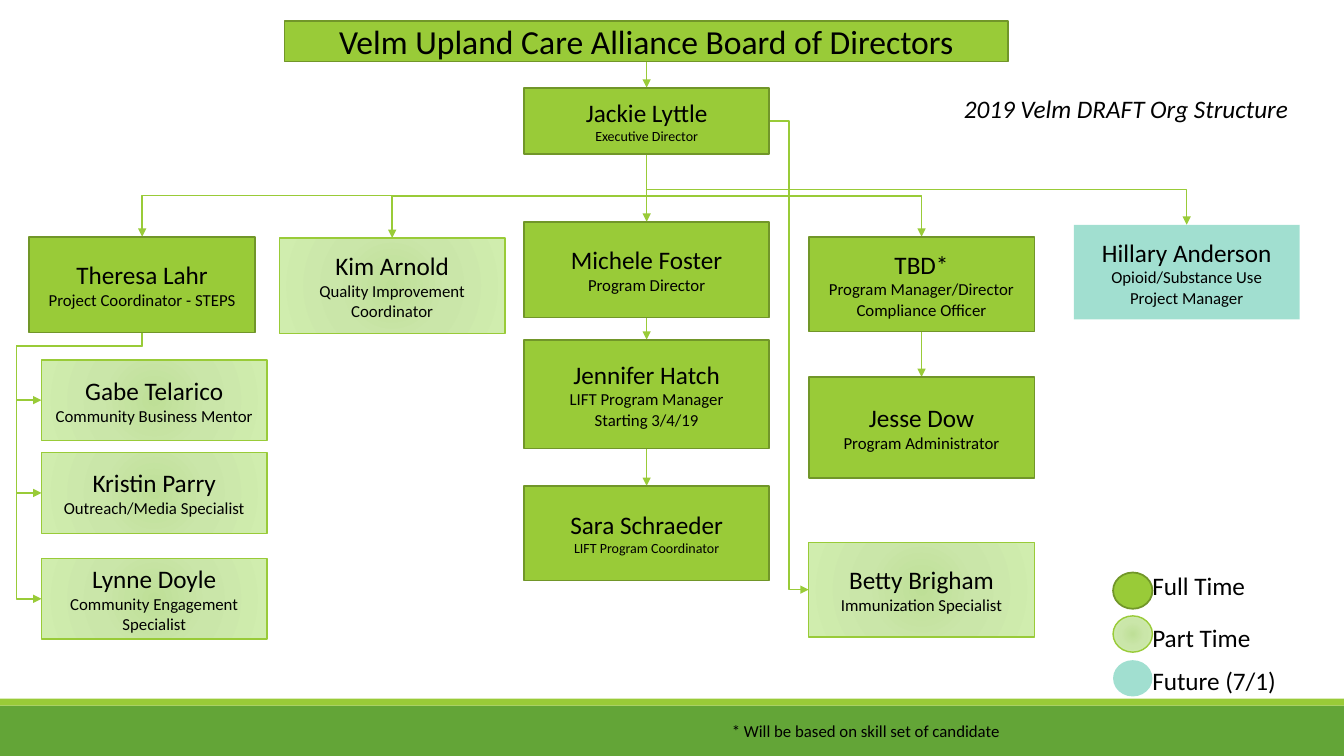
import dataclasses
import pptx
import pptx.dml.color
import pptx.enum.shapes
import pptx.enum.text
import pptx.oxml
import pptx.oxml.ns
import pptx.util

WIDE = pptx.util.Inches(13.33)
HIGH = pptx.util.Inches(7.5)
NS = 'xmlns:a="http://schemas.openxmlformats.org/drawingml/2006/main"'
KIND = pptx.enum.shapes.MSO_SHAPE
ALIGN = pptx.enum.text.PP_ALIGN
TOP, LEFT, BASE, RIGHT = range(4)


@dataclasses.dataclass(frozen=True)
class Theme:
    font: str = "Calibri"
    ink: str = "000000"
    full: str = "99CB38"
    edge: str = "719629"
    band: str = "63A537"
    later: str = "44C1A3"
    glow: tuple = ((0, "BEDF97"), (45, "CAE6A9"), (100, "D0EDAE"))
    head: int = 24
    name: int = 18
    role: int = 12
    small: int = 10
    thick: float = 1.25
    thin: float = 1


THEME = Theme()

COLS = {
    "steps": (2.18, 16.8),
    "staff": (3.08, 16.8),
    "care": (20.78, 16.8),
    "lift": (39, 18.23),
    "admin": (60.17, 16.8),
    "next": (79.9, 16.8),
}

BOXES = [
    ("Jackie Lyttle", ["Executive Director"], "lift", 11.6, 8.8, "full", THEME.small),
    ("Theresa Lahr", ["Project Coordinator - STEPS"], "steps", 31.33, 12.67, "full", THEME.role),
    ("Kim Arnold", ["Quality Improvement Coordinator"], "care", 31.47, 12.67, "part", THEME.role),
    ("Michele Foster", ["Program Director"], "lift", 29.33, 12.67, "full", THEME.role),
    ("TBD*", ["Program Manager/Director Compliance Officer"], "admin", 31.33, 12.53, "full", THEME.role),
    ("Hillary Anderson", ["Opioid/Substance Use", "Project Manager"], "next", 29.73, 12.53, "later", THEME.role),
    ("Gabe Telarico", ["Community Business Mentor"], "staff", 47.6, 10.67, "part", THEME.role),
    ("Kristin Parry", ["Outreach/Media Specialist"], "staff", 59.87, 10.67, "part", THEME.role),
    ("Lynne Doyle", ["Community Engagement Specialist"], "staff", 73.87, 10.67, "part", THEME.role),
    ("Jennifer Hatch", ["LIFT Program Manager", "Starting 3/4/19"], "lift", 44.93, 14.4, "full", THEME.role),
    ("Sara Schraeder", ["LIFT Program Coordinator"], "lift", 64.27, 12.53, "full", THEME.small),
    ("Jesse Dow", ["Program Administrator"], "admin", 49.87, 13.33, "full", THEME.role),
    ("Betty Brigham", ["Immunization Specialist"], "admin", 71.73, 12.53, "part", THEME.role),
]

LINKS = [
    ("Board", BASE, "Jackie Lyttle", TOP, [0.5]),
    ("Jackie Lyttle", BASE, "TBD*", TOP, [0.5]),
    ("Jackie Lyttle", BASE, "Jesse Dow", TOP, [0.19]),
    ("Jackie Lyttle", BASE, "Kim Arnold", TOP, [0.5]),
    ("Jackie Lyttle", BASE, "Theresa Lahr", TOP, [0.5]),
    ("Jackie Lyttle", BASE, "Michele Foster", TOP, [0.5]),
    ("Jackie Lyttle", BASE, "Hillary Anderson", TOP, [0.5]),
    ("Jackie Lyttle", RIGHT, "Betty Brigham", LEFT, [0.5]),
    ("Michele Foster", BASE, "Jennifer Hatch", TOP, [0.5]),
    ("Jennifer Hatch", BASE, "Sara Schraeder", TOP, [0.5]),
    ("Theresa Lahr", BASE, "Gabe Telarico", LEFT, [0.2, 1.25]),
    ("Theresa Lahr", BASE, "Kristin Parry", LEFT, [0.08, 1.25]),
    ("Theresa Lahr", BASE, "Lynne Doyle", LEFT, [0.05, 1.25]),
]

KEYS = [
    ("Full Time", "full", 75.73, 74.8),
    ("Part Time", "part", 81.47, 81.6),
    ("Future (7/1)", "later", 87.33, 87.33),
]


def place(x, y, w, h):
    return [int(whole * part / 100) for whole, part in ((WIDE, x), (HIGH, y), (WIDE, w), (HIGH, h))]


def tint(code):
    return pptx.dml.color.RGBColor.from_string(code)


def paint(shape, code, edge=None, width=THEME.thick):
    shape.fill.solid()
    shape.fill.fore_color.rgb = tint(code)
    if edge:
        shape.line.color.rgb = tint(edge)
        shape.line.width = pptx.util.Pt(width)
    else:
        shape.line.fill.background()


def style(shape, time):
    if time == "full":
        paint(shape, THEME.full, THEME.edge)
    elif time == "later":
        paint(shape, THEME.later)
        shade = shape.element.spPr.find(".//" + pptx.oxml.ns.qn("a:srgbClr"))
        shade.append(pptx.oxml.parse_xml(f'<a:alpha {NS} val="50000"/>'))
    else:
        paint(shape, THEME.full, THEME.full, THEME.thin)
        stops = "".join(
            f'<a:gs pos="{spot * 1000}"><a:srgbClr val="{code}"/></a:gs>' for spot, code in THEME.glow
        )
        glow = pptx.oxml.parse_xml(
            f'<a:gradFill {NS} rotWithShape="1"><a:gsLst>{stops}</a:gsLst><a:path path="circle">'
            '<a:fillToRect l="100000" t="100000" r="100000" b="100000"/></a:path></a:gradFill>'
        )
        props = shape.element.spPr
        props.replace(props.find(pptx.oxml.ns.qn("a:solidFill")), glow)


def write(frame, lines, align, slant=False):
    frame.word_wrap = True
    for num, (text, size) in enumerate(lines):
        para = frame.paragraphs[0] if num == 0 else frame.add_paragraph()
        para.alignment = align
        run = para.add_run()
        run.text = text
        run.font.name = THEME.font
        run.font.size = pptx.util.Pt(size)
        run.font.color.rgb = tint(THEME.ink)
        run.font.italic = slant


def form(slide, kind, *area):
    shape = slide.shapes.add_shape(kind, *place(*area))
    shape.shadow.inherit = False
    return shape


def label(slide, text, size, area, slant=False):
    box = slide.shapes.add_textbox(*place(*area))
    write(box.text_frame, [(text, size)], ALIGN.LEFT, slant)


def person(slide, name, roles, col, top, tall, time, size):
    left, width = COLS[col]
    box = form(slide, KIND.RECTANGLE, left, top, width, tall)
    style(box, time)
    box.text_frame.vertical_anchor = pptx.enum.text.MSO_ANCHOR.MIDDLE
    write(box.text_frame, [(name, THEME.name)] + [(role, size) for role in roles], ALIGN.CENTER)
    return box


def board(slide):
    box = slide.shapes.title
    box.left, box.top, box.width, box.height = place(21.16, 2.8, 53.86, 5.33)
    box.element.spPr.xfrm.addnext(
        pptx.oxml.parse_xml(f'<a:prstGeom {NS} prst="roundRect"><a:avLst/></a:prstGeom>')
    )
    style(box, "full")
    frame = box.text_frame
    frame.auto_size = pptx.enum.text.MSO_AUTO_SIZE.NONE
    frame.vertical_anchor = pptx.enum.text.MSO_ANCHOR.MIDDLE
    write(frame, [("Velm Upland Care Alliance Board of Directors", THEME.head)], ALIGN.CENTER)
    return box


def link(slide, start, out, end, into, bends):
    line = slide.shapes.add_connector(pptx.enum.shapes.MSO_CONNECTOR.ELBOW, 0, 0, 0, 0)
    line.begin_connect(start, out)
    line.end_connect(end, into)
    line.line.color.rgb = tint(THEME.full)
    line.line.width = pptx.util.Pt(THEME.thin)
    props = line.element.spPr
    if out == BASE:
        east = line.end_x > line.begin_x
        mid_x, mid_y = (line.begin_x + line.end_x) // 2, (line.begin_y + line.end_y) // 2
        long, wide = line.height, line.width
        for flip in ("flipH", "flipV"):
            props.xfrm.attrib.pop(flip, None)
        line.left, line.top = mid_x - long // 2, mid_y - wide // 2
        line.width, line.height = long, wide
        props.xfrm.set("rot", str((270 if east else 90) * 60000))
        if east:
            props.xfrm.set("flipH", "1")
    guides = "".join(
        f'<a:gd name="adj{num}" fmla="val {round(bend * 100000)}"/>' for num, bend in enumerate(bends, 1)
    )
    props.replace(props.find(pptx.oxml.ns.qn("a:prstGeom")), pptx.oxml.parse_xml(
        f'<a:prstGeom {NS} prst="bentConnector{len(bends) + 2}"><a:avLst>{guides}</a:avLst></a:prstGeom>'
    ))
    props.find(pptx.oxml.ns.qn("a:ln")).append(pptx.oxml.parse_xml(f'<a:tailEnd {NS} type="triangle"/>'))
    props.append(pptx.oxml.parse_xml(f"<a:effectLst {NS}/>"))
    slide.shapes.element.insert(2, line.element)


def main():
    deck = pptx.Presentation()
    deck.slide_width, deck.slide_height = WIDE, HIGH
    slide = deck.slides.add_slide(deck.slide_layouts.get_by_name("Title Only"))
    paint(form(slide, KIND.RECTANGLE, 0, 93.33, 100, 6.67), THEME.band)
    paint(form(slide, KIND.RECTANGLE, 0, 92.4, 100, 0.93), THEME.full)
    boxes = {"Board": board(slide)}
    for name, *rest in BOXES:
        boxes[name] = person(slide, name, *rest)
    for start, out, end, into, bends in LINKS:
        link(slide, boxes[start], out, boxes[end], into, bends)
    for text, time, dot, top in KEYS:
        style(form(slide, KIND.OVAL, 82.82, dot, 2.93, 4.8), time)
        label(slide, text, THEME.name, (85, top, 13.8, 5.33))
    label(slide, "2019 Velm DRAFT Org Structure", THEME.name, (70.97, 11.73, 29, 5.33), True)
    label(slide, "* Will be based on skill set of candidate", THEME.role, (53.71, 94.67, 34.43, 4))
    deck.save("out.pptx")


if __name__ == "__main__":
    main()
